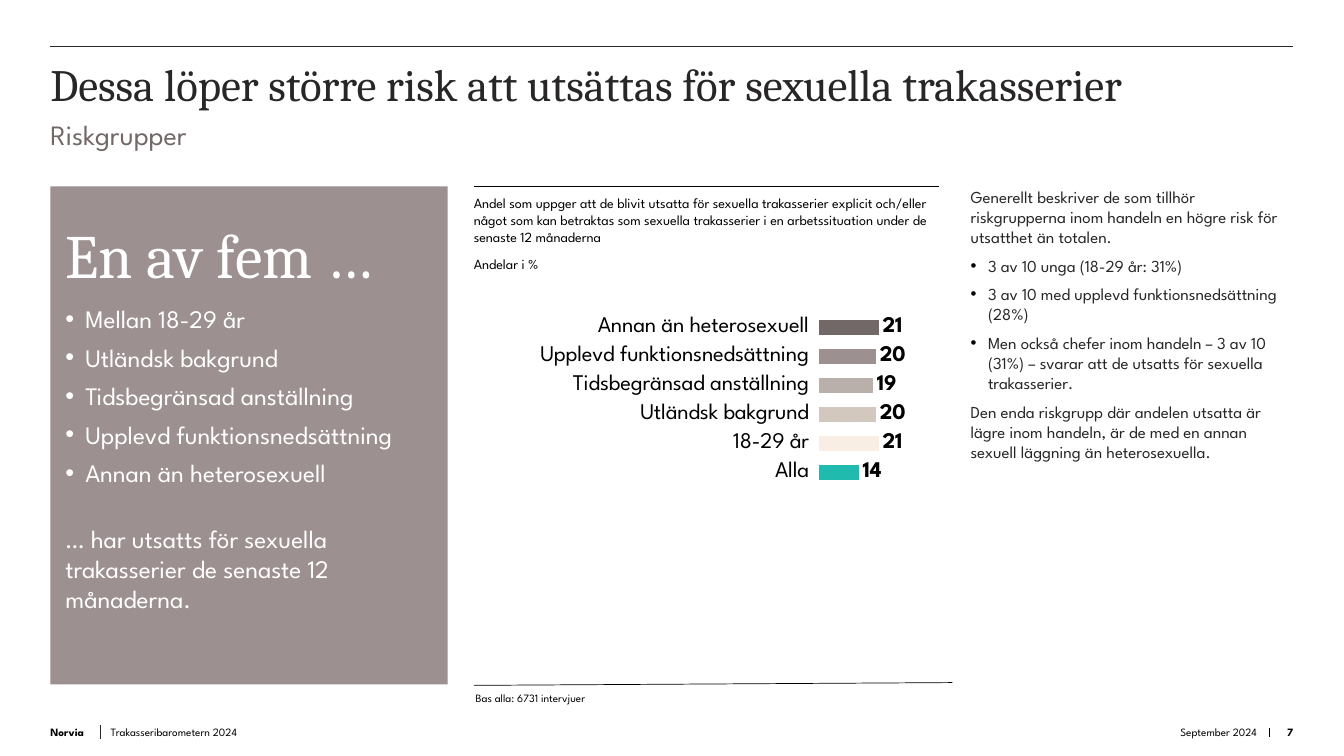
from dataclasses import dataclass

from lxml import etree
from pptx import Presentation
from pptx.chart.data import CategoryChartData
from pptx.dml.color import RGBColor
from pptx.enum.chart import XL_CHART_TYPE, XL_LABEL_POSITION, XL_TICK_LABEL_POSITION, XL_TICK_MARK
from pptx.enum.shapes import MSO_CONNECTOR, MSO_SHAPE
from pptx.enum.text import MSO_ANCHOR, PP_ALIGN
from pptx.oxml import parse_xml
from pptx.oxml.ns import nsdecls, qn
from pptx.slide import Slide
from pptx.text.text import TextFrame
from pptx.util import Cm, Pt

BAR_CLUSTERED = XL_CHART_TYPE.BAR_CLUSTERED
OUTSIDE_END = XL_LABEL_POSITION.OUTSIDE_END
NO_TICK = XL_TICK_MARK.NONE
LOW = XL_TICK_LABEL_POSITION.LOW
STRAIGHT = MSO_CONNECTOR.STRAIGHT
RECTANGLE = MSO_SHAPE.RECTANGLE
TOP, BOTTOM = MSO_ANCHOR.TOP, MSO_ANCHOR.BOTTOM
LEFT, RIGHT = PP_ALIGN.LEFT, PP_ALIGN.RIGHT

SERIF = "Cambria"
SANS = "League Spartan"
COLORS = {
    "black": "000000",
    "ink": "282626",
    "white": "FFFFFF",
    "teal": "20BAAF",
    "cream": "F9EEE3",
    "sand": "D3C8BD",
    "stone": "BAB0AB",
    "mauve": "9C9090",
    "umber": "736868",
}


@dataclass(frozen=True)
class Line:
    text: str
    size: float
    color: str = "black"
    font: str = SANS
    bold: bool = False
    align: PP_ALIGN = LEFT
    before: float = 0
    after: float = 0
    bullet_indent: float = 0
    bullet_color: str = "black"


@dataclass(frozen=True)
class TextBlock:
    left: float
    top: float
    width: float
    height: float
    lines: tuple[Line, ...]
    anchor: MSO_ANCHOR = TOP
    inset_top: float = 0


@dataclass(frozen=True)
class Rule:
    start: tuple[float, float]
    end: tuple[float, float]
    color: str = "black"


@dataclass(frozen=True)
class Bar:
    category: str
    value: int
    color: str


RULES = (
    Rule((2.54, 18.61), (2.54, 18.26), "ink"),
    Rule((1.27, 1.17), (32.59, 1.17), "ink"),
    Rule((31.98, 18.34), (31.98, 18.57)),
    Rule((11.94, 4.7), (23.67, 4.7)),
    Rule((11.94, 17.27), (24, 17.2)),
)

RISK_GROUPS = (
    "Mellan 18-29 år",
    "Utländsk bakgrund",
    "Tidsbegränsad anställning",
    "Upplevd funktionsnedsättning",
    "Annan än heterosexuell",
)

PANEL = TextBlock(1.27, 4.7, 10.01, 12.55, (
    Line("En av fem …", 44, "white", SERIF, after=6),
    *(Line(group, 18, "white", before=3, after=3, bullet_indent=0.5, bullet_color="white")
      for group in RISK_GROUPS),
    Line("… har utsatts för sexuella trakasserier de senaste 12 månaderna.", 18, "white", before=22),
), inset_top=0.76)

FINDINGS = (
    "3 av 10 unga (18-29 år: 31%)",
    "3 av 10 med upplevd funktionsnedsättning (28%)",
    "Men också chefer inom handeln – 3 av 10 (31%) – svarar att de utsatts för sexuella trakasserier.",
)

TEXT_BLOCKS = (
    TextBlock(1.27, 1.17, 31.3, 1.8, (
        Line("Dessa löper större risk att utsättas för sexuella trakasserier", 32, "ink", SERIF),
    ), inset_top=0.25),
    TextBlock(1.27, 2.95, 21.34, 1.17, (Line("Riskgrupper", 20, "umber"),)),
    TextBlock(11.94, 4.9, 11.48, 1.17, (
        Line("Andel som uppger att de blivit utsatta för sexuella trakasserier explicit och/eller "
             "något som kan betraktas som sexuella trakasserier i en arbetssituation under de "
             "senaste 12 månaderna", 10, after=6),
    )),
    TextBlock(11.94, 6.43, 6.73, 0.48, (Line("Andelar i %", 10, after=6),)),
    TextBlock(11.99, 17.42, 20.68, 0.38, (Line("Bas alla: 6731 intervjuer", 8, after=6),)),
    TextBlock(24.46, 4.7, 8.18, 12.7, (
        Line("Generellt beskriver de som tillhör riskgrupperna inom handeln en högre risk för "
             "utsatthet än totalen.", 12, "ink", after=6),
        *(Line(finding, 12, "ink", after=6, bullet_indent=0.44) for finding in FINDINGS),
        Line("Den enda riskgrupp där andelen utsatta är lägre inom handeln, är de med en annan "
             "sexuell läggning än heterosexuella.", 12, "ink", after=6),
    )),
    TextBlock(1.27, 18.19, 1.27, 0.43, (Line("Norvia", 8, bold=True),), BOTTOM),
    TextBlock(2.79, 18.19, 19.81, 0.43, (Line("Trakasseribarometern 2024", 8),), BOTTOM),
    TextBlock(26.09, 18.19, 5.59, 0.43, (Line("September 2024", 8, align=RIGHT),), BOTTOM),
    TextBlock(31.98, 18.19, 0.61, 0.43, (Line("7", 8, bold=True, align=RIGHT),), BOTTOM),
)

BARS = (
    Bar("Alla", 14, "teal"),
    Bar("18-29 år", 21, "cream"),
    Bar("Utländsk bakgrund", 20, "sand"),
    Bar("Tidsbegränsad anställning", 19, "stone"),
    Bar("Upplevd funktionsnedsättning", 20, "mauve"),
    Bar("Annan än heterosexuell", 21, "umber"),
)
PLOT_AREA = {"x": 0.5, "y": 0.11, "w": 0.39, "h": 0.42}


def rgb(name: str) -> RGBColor:
    return RGBColor.from_string(COLORS[name])


def style_font(font, size: float, color: str, name: str = SANS, bold: bool = False) -> None:
    font.size = Pt(size)
    font.name = name
    font.bold = bold
    font.color.rgb = rgb(color)


def add_bullet(paragraph, indent: float, color: str) -> None:
    properties = paragraph._p.get_or_add_pPr()
    properties.set("marL", str(Cm(indent)))
    properties.set("indent", str(-Cm(indent)))
    bullet_color = etree.SubElement(properties, qn("a:buClr"))
    etree.SubElement(bullet_color, qn("a:srgbClr"), val=COLORS[color])
    etree.SubElement(properties, qn("a:buFont"), typeface="Arial")
    etree.SubElement(properties, qn("a:buChar"), char="•")


def fill_text(text_frame: TextFrame, block: TextBlock, side_inset: float = 0) -> None:
    text_frame.word_wrap = True
    text_frame.vertical_anchor = block.anchor
    text_frame.margin_left = text_frame.margin_right = Cm(side_inset)
    text_frame.margin_top = Cm(block.inset_top)
    text_frame.margin_bottom = 0
    text_frame.text = "\n".join(line.text for line in block.lines)
    for paragraph, line in zip(text_frame.paragraphs, block.lines):
        paragraph.alignment = line.align
        paragraph.space_before = Pt(line.before)
        paragraph.space_after = Pt(line.after)
        if line.bullet_indent:
            add_bullet(paragraph, line.bullet_indent, line.bullet_color)
        style_font(paragraph.runs[0].font, line.size, line.color, line.font, line.bold)


def bounds(block: TextBlock) -> tuple[Cm, Cm, Cm, Cm]:
    return Cm(block.left), Cm(block.top), Cm(block.width), Cm(block.height)


def draw_rule(slide: Slide, rule: Rule) -> None:
    connector = slide.shapes.add_connector(STRAIGHT, *map(Cm, rule.start + rule.end))
    connector.line.color.rgb = rgb(rule.color)
    connector.line.width = Pt(0.5)
    etree.SubElement(connector._element.spPr, qn("a:effectLst"))


def draw_panel(slide: Slide, block: TextBlock) -> None:
    shape = slide.shapes.add_shape(RECTANGLE, *bounds(block))
    shape.shadow.inherit = False
    shape.fill.solid()
    shape.fill.fore_color.rgb = rgb("mauve")
    shape.line.fill.background()
    fill_text(shape.text_frame, block, side_inset=0.38)


def draw_chart(slide: Slide, bars: tuple[Bar, ...]) -> None:
    data = CategoryChartData()
    data.categories = [bar.category for bar in bars]
    data.add_series("Series 1", [bar.value for bar in bars])
    chart = slide.shapes.add_chart(
        BAR_CLUSTERED, Cm(11.46), Cm(6.73), Cm(18.36), Cm(10.46), data).chart
    chart.has_legend = False
    chart.has_title = False
    style_font(chart.font, 16, "black")
    chart.value_axis.minimum_scale = 0
    chart.value_axis.maximum_scale = 100
    chart.value_axis.has_major_gridlines = False
    chart.value_axis.visible = False
    axis = chart.category_axis
    axis.major_tick_mark = NO_TICK
    axis.tick_label_position = LOW
    axis.format.line.fill.background()
    style_font(axis.tick_labels.font, 16, "black")
    plot = chart.plots[0]
    plot.gap_width = 99
    plot.vary_by_categories = False
    plot.has_data_labels = True
    plot.data_labels.show_value = True
    plot.data_labels.position = OUTSIDE_END
    style_font(plot.data_labels.font, 16, "black", bold=True)
    for index, bar in enumerate(bars):
        fill = plot.series[0].points[index].format.fill
        fill.solid()
        fill.fore_color.rgb = rgb(bar.color)
    plot_area = chart._chartSpace.chart.plotArea
    for layout in plot_area.findall(qn("c:layout")):
        plot_area.remove(layout)
    modes = '<c:layoutTarget val="inner"/><c:xMode val="edge"/><c:yMode val="edge"/>'
    sizes = "".join(f'<c:{key} val="{value}"/>' for key, value in PLOT_AREA.items())
    plot_area.insert(0, parse_xml(
        f'<c:layout {nsdecls("c")}><c:manualLayout>{modes}{sizes}</c:manualLayout></c:layout>'))


def main() -> None:
    presentation = Presentation()
    presentation.slide_width = Cm(33.87)
    presentation.slide_height = Cm(19.05)
    slide = presentation.slides.add_slide(presentation.slide_layouts[6])
    draw_chart(slide, BARS)
    draw_panel(slide, PANEL)
    for rule in RULES:
        draw_rule(slide, rule)
    for block in TEXT_BLOCKS:
        fill_text(slide.shapes.add_textbox(*bounds(block)).text_frame, block)
    presentation.save("out.pptx")


if __name__ == "__main__":
    main()
